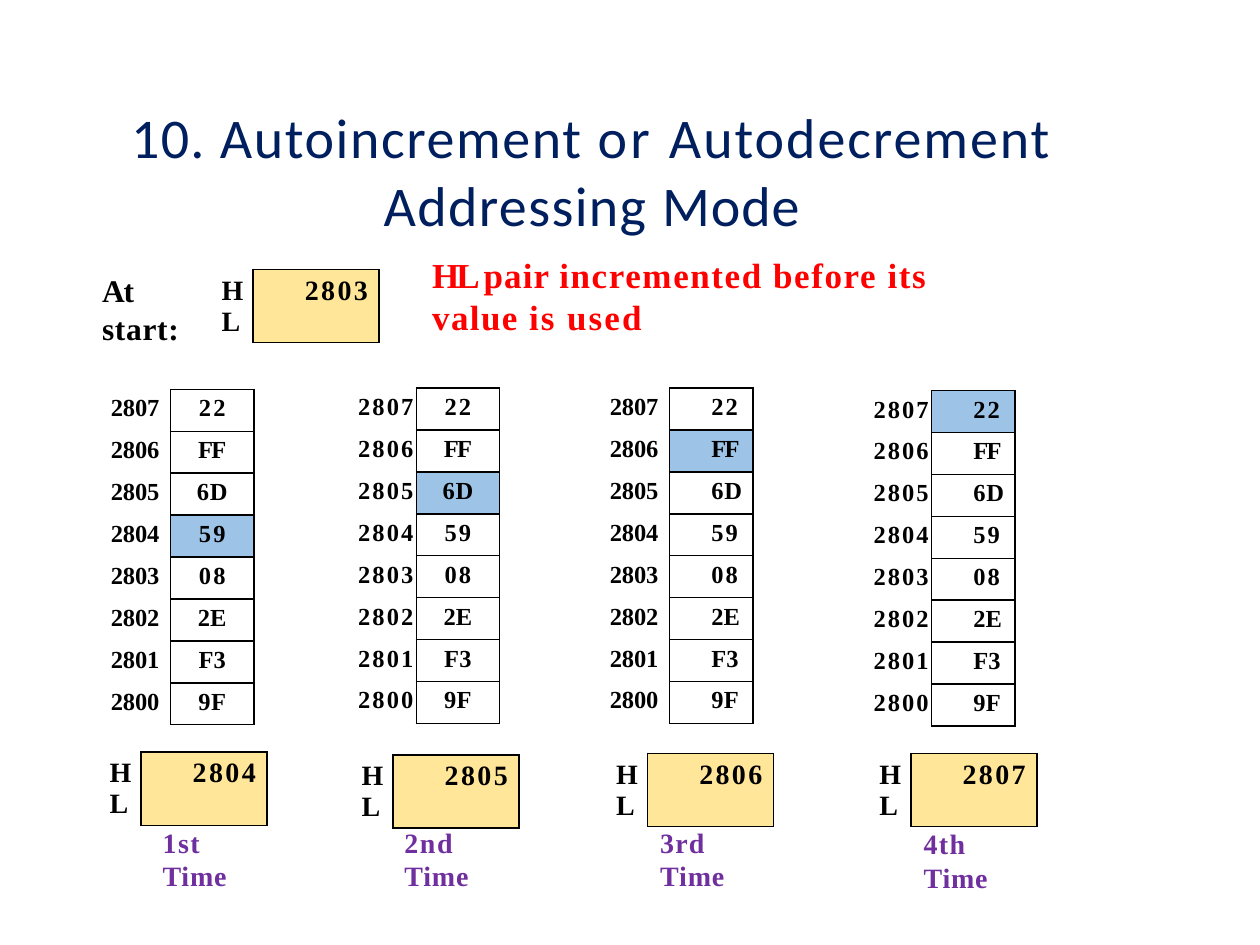
from lxml import etree
from pptx import Presentation
from pptx import util as u
from pptx.dml.color import RGBColor
from pptx.enum import text
from pptx.oxml import ns

color = RGBColor.from_string
ALIGN = text.PP_ALIGN
SERIF = "Times New Roman"
BLACK, NAVY, RED, PURPLE = "000000", "001F5F", "FF0000", "6F2F9F"
BLUE, YELLOW = "9DC3E6", "FFE699"

presentation = Presentation()
presentation.slide_width, presentation.slide_height = u.Inches(10), u.Inches(7.5)
slide = presentation.slides.add_slide(presentation.slide_layouts[6])

# Grid of 100 columns by 75 rows; all lengths below are counted in its units
unit = presentation.slide_width // 100


def write(paragraph, runs, size, hue, before, align=ALIGN.LEFT, font=SERIF):
    """Fill a paragraph with (wording, letter spacing in points) runs."""
    paragraph.alignment = align
    paragraph.space_before = u.Pt(before)
    paragraph.font.size = u.Pt(size)
    paragraph.font.name = font
    paragraph.font.bold = font == SERIF
    paragraph.font.color.rgb = color(hue)
    for wording, spacing in runs:
        run = paragraph.add_run()
        run.text = wording
        run._r.get_or_add_rPr().set("spc", str(round(spacing * 100)))


def add_pairs(left, top, widths, height, pairs, size, styles, fills):
    """Add a table of label and boxed value; a style is (align, left, right margin)."""
    frame = slide.shapes.add_table(
        len(pairs), 2, int(left * unit), int(top * unit),
        int(sum(widths) * unit), int(height * len(pairs) * unit))
    table = frame.table
    table.first_row = table.horz_banding = False
    for column, width in zip(table.columns, widths):
        column.width = int(width * unit)
    for index, pair in enumerate(pairs):
        table.rows[index].height = int(height * unit)
        for side, (run, style) in enumerate(zip(pair, styles)):
            cell = table.cell(index, side)
            align, cell.margin_left, cell.margin_right = (
                style[0], int(style[1] * unit), int(style[2] * unit))
            cell.margin_top, cell.margin_bottom = int(0.45 * unit), 0
            write(cell.text_frame.paragraphs[0], [run], size, BLACK, 3.2, align)
            if side and index in fills:
                cell.fill.solid()
                cell.fill.fore_color.rgb = color(fills[index])
            else:
                cell.fill.background()
            # Values are boxed, labels only share the dividing line
            edges = ("lnL", "lnR", "lnT", "lnB") if side else ("lnR",)
            for place, edge in enumerate(edges):
                line = etree.Element(ns.qn("a:" + edge), w=str(u.Pt(1)))
                solid = etree.SubElement(line, ns.qn("a:solidFill"))
                etree.SubElement(solid, ns.qn("a:srgbClr"), val=BLACK)
                cell._tc.get_or_add_tcPr().insert(place, line)


# Title, starting label and explanation
title = [("10. ", 0.7), ("Autoincrement ", 0.9), ("or ", 1.8),
         ("Autodecrement ", 1.1), ("Addressing ", 0.8), ("Mode", 0.5)]
start = [("At ", -0.6), ("start:", 0.4)]
rule = [("HL ", -1.7), ("pair ", 0.6), ("incremented before its ", 0.9),
        ("value ", 0.8), ("is ", 1.1), ("used", 1.2)]
texts = [
    ((7.5, 8, 78.8, 10.9), title, 32, NAVY, 1.1, ALIGN.CENTER, "Calibri"),
    ((8, 21.4, 7.1, 6.2), start, 18, BLACK, 1, ALIGN.LEFT, SERIF),
    ((34.2, 20, 42.2, 6.9), rule, 20, RED, 1.1, ALIGN.LEFT, SERIF),
]

# Captions below the four steps
captions = [("1st ", 12.8, 65.4, 0.9), ("2nd ", 32, 65.4, 0.9),
            ("3rd ", 52.3, 65.4, 0.7), ("4th ", 73.2, 65.5, 0.8)]
for ordinal, left, top, spacing in captions:
    texts.append(((left, top, 7.2, 5.4), [(ordinal, spacing), ("Time", 0.5)],
                  16, PURPLE, 0.1, ALIGN.LEFT, SERIF))

for box, runs, size, hue, before, align, font in texts:
    shape = slide.shapes.add_textbox(*(int(length * unit) for length in box))
    frame = shape.text_frame
    frame.word_wrap = True
    frame.margin_left = frame.margin_top = int(0.1 * unit)
    frame.margin_right = frame.margin_bottom = 0
    if font == "Calibri":
        frame.vertical_anchor = text.MSO_ANCHOR.MIDDLE
    write(frame.paragraphs[0], runs, size, hue, before, align, font)

# Memory contents at each step, with the addressed byte highlighted
memory = [("22", 1.2), ("FF", -0.9), ("6D", 0.5), ("59", 1.2),
          ("08", 1.2), ("2E", 0), ("F3", 0.1), ("9F", 0.2)]
right_label, center_label = (ALIGN.RIGHT, 0, 0.9), (ALIGN.CENTER, 0.4, 0)
center_value, left_value = (ALIGN.CENTER, 0, 0), (ALIGN.LEFT, 3.3, 0)
steps = [
    (8.3, 30.9, -0.1, right_label, center_value),
    (27.8, 30.8, 1.2, center_label, center_value),
    (47.9, 30.8, -0.1, right_label, left_value),
    (68.7, 31, 1.2, center_label, left_value),
]
for step, (left, top, spacing, *styles) in enumerate(steps):
    pairs = [((str(2807 - index), spacing), byte) for index, byte in enumerate(memory)]
    add_pairs(left, top, (5.25, 6.6), 3.33, pairs, 14, styles, {3 - step: BLUE})

# HL register at the start and after each step
register_styles = [(ALIGN.LEFT, 1.4, 0), (ALIGN.LEFT, 4.1, 0)]
registers = [(16.2, 21.4), (7.3, 59.7), (27.3, 59.9), (47.5, 59.8), (68.4, 59.8)]
for step, (left, top) in enumerate(registers):
    pair = (("HL", -1.4), (str(2803 + step), 1.4))
    add_pairs(left, top, (3.9, 10), 5.8, [pair], 16, register_styles, {0: YELLOW})

presentation.save("out.pptx")
